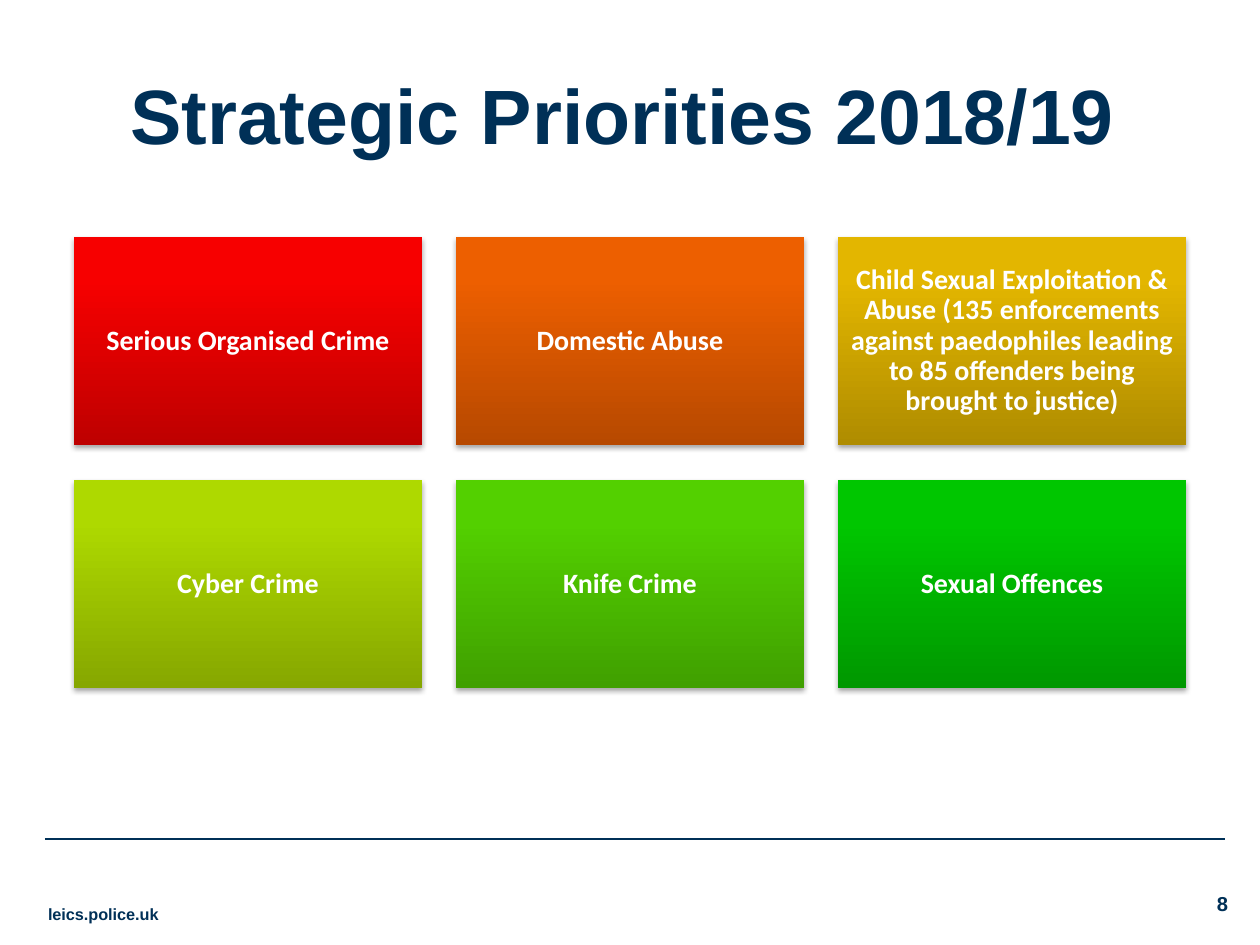
from copy import deepcopy
from pptx import Presentation
from pptx.dml.color import RGBColor
from pptx.enum.shapes import MSO_CONNECTOR as Conn, MSO_SHAPE as Shape
from pptx.enum.text import MSO_ANCHOR as Anchor, PP_ALIGN as Align
from pptx.oxml import parse_xml
from pptx.oxml.ns import nsdecls
from pptx.util import Pt

SCALE = 914400 / 126
NAVY = "003057"
SHADOW = (
    f'<a:effectLst {nsdecls("a")}>'
    '<a:outerShdw blurRad="40000" dist="23000" dir="5400000" rotWithShape="0">'
    '<a:srgbClr val="000000"><a:alpha val="35000"/></a:srgbClr>'
    '</a:outerShdw></a:effectLst>'
)
CARDS = [
    ("Serious Organised Crime", ("BE0000", "F70000", "F80000")),
    ("Domestic Abuse", ("B74900", "ED5F00", "EE5F00")),
    ("Child Sexual Exploitation & Abuse (135 enforcements against paedophiles "
     "leading to 85 offenders being brought to justice)",
     ("AF8C00", "E3B600", "E4B700")),
    ("Cyber Crime", ("86A700", "AED900", "AFDA00")),
    ("Knife Crime", ("40A000", "53D000", "53D100")),
    ("Sexual Offences", ("009800", "00C600", "00C700")),
]


def px(*sizes):
    return [round(size * SCALE) for size in sizes]


def color(code):
    return RGBColor.from_string(code)


def write(frame, text, size, code, font="Arial", align=Align.LEFT, inset=(13, 6, 13, 6)):
    frame.word_wrap = True
    for side, gap in zip(("left", "top", "right", "bottom"), px(*inset)):
        setattr(frame, f"margin_{side}", gap)
    para = frame.paragraphs[0]
    para.alignment = align
    run = para.add_run()
    run.text = text
    look = {"name": font, "size": Pt(size), "bold": True}
    for key, value in look.items():
        setattr(run.font, key, value)
    run.font.color.rgb = color(code)
    return run


def label(slide, box, text, size, **style):
    frame = slide.shapes.add_textbox(*px(*box)).text_frame
    return write(frame, text, size, NAVY, **style)


def shade(shape, codes):
    """Fill from bottom to top with three stops."""
    fill = shape.fill
    fill.gradient()
    stops = shape._element.spPr.find(".//{*}gsLst")
    stops.append(deepcopy(stops[-1]))
    for stop, place, code in zip(fill.gradient_stops, (0, 0.8, 1), codes):
        stop.position = place
        stop.color.rgb = color(code)
    fill.gradient_angle = 90


def card(slide, box, text, codes):
    shape = slide.shapes.add_shape(Shape.RECTANGLE, *px(*box))
    shade(shape, codes)
    shape.line.fill.background()
    shape._element.spPr.append(parse_xml(SHADOW))
    frame = shape.text_frame
    frame.vertical_anchor = Anchor.MIDDLE
    write(frame, text, 16, "FFFFFF", "Calibri", Align.CENTER, (9, 9, 9, 9))
    frame.paragraphs[0].line_spacing = 0.9


def rule(slide, left, right, y):
    line = slide.shapes.add_connector(Conn.STRAIGHT, *px(left, y, right, y))
    line.line.color.rgb = color(NAVY)
    line.line.width = Pt(0.75)
    line._element.spPr.append(parse_xml(f'<a:effectLst {nsdecls("a")}/>'))


def main():
    deck = Presentation()
    deck.slide_width, deck.slide_height = px(1260, 945)
    slide = deck.slides.add_slide(deck.slide_layouts[6])
    rule(slide, 45, 1225, 839)
    site = label(slide, (35, 895, 169, 81), "leics.police.uk", 16)
    site._r.get_or_add_rPr().set("baseline", "30000")
    label(slide, (1186, 885, 55, 44), "8", 11.5, align=Align.RIGHT)
    label(slide, (33, 55, 1180, 100), "Strategic Priorities 2018/19", 44,
          align=Align.CENTER, inset=(13, 13, 13, 6))
    for index, (text, codes) in enumerate(CARDS):
        row, col = divmod(index, 3)
        card(slide, (74 + 382 * col, 237 + 243 * row, 348, 208), text, codes)
    deck.save("out.pptx")


if __name__ == "__main__":
    main()
